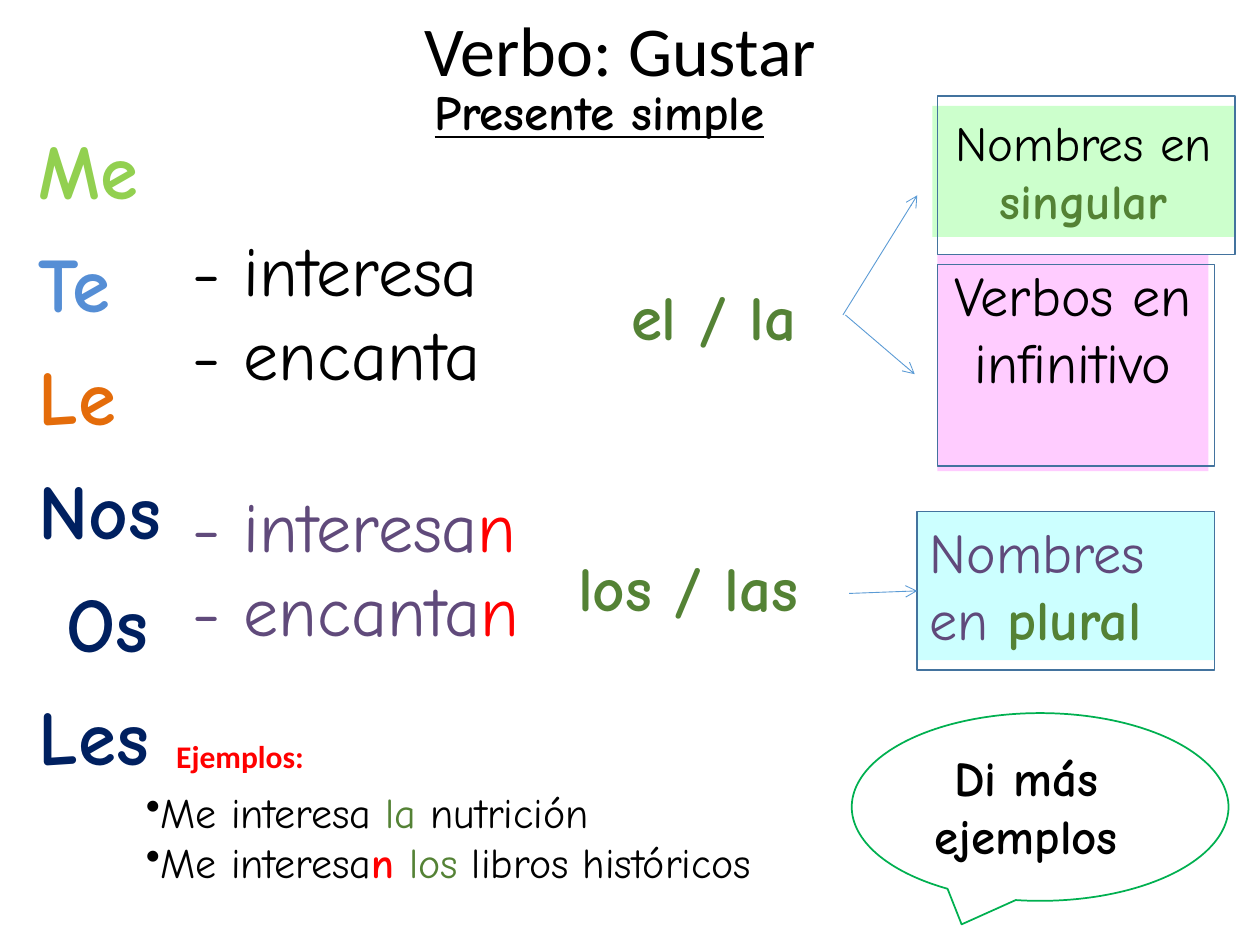
from lxml import etree
from pptx import Presentation
from pptx.dml.color import RGBColor
from pptx.enum.shapes import MSO_CONNECTOR, MSO_SHAPE
from pptx.enum.text import MSO_ANCHOR, MSO_AUTO_SIZE, PP_ALIGN
from pptx.oxml.ns import qn
from pptx.util import Inches, Pt

RECT = MSO_SHAPE.RECTANGLE
CALLOUT = MSO_SHAPE.OVAL_CALLOUT
STRAIGHT = MSO_CONNECTOR.STRAIGHT
LEFT, CENTER = PP_ALIGN.LEFT, PP_ALIGN.CENTER
TOP, NO_FIT = MSO_ANCHOR.TOP, MSO_AUTO_SIZE.NONE
LEFT_SIDE = 1

COLORS = {
    "black": "000000", "red": "FF0000", "green": "548235", "purple": "604A7B",
    "lime": "92D050", "blue": "558ED5", "orange": "E46C0A", "navy": "002060",
    "mint": "CCFFCC", "pink": "FFCCFF", "aqua": "CCFFFF",
    "border": "43739E", "arrow": "5B9BD5", "callout": "00B050",
}


class SlideBuilder:
    COLS, ROWS = 100, 75
    BODY, HEADING = "Comic Neue", "Calibri"

    def __init__(self, prs):
        self.prs = prs
        self.s = prs.slides.add_slide(prs.slide_layouts[5])

    def x(self, cols):
        return round(self.prs.slide_width * cols / self.COLS)

    def y(self, rows):
        return round(self.prs.slide_height * rows / self.ROWS)

    def box(self, left, top, width, height):
        return self.x(left), self.y(top), self.x(width), self.y(height)

    def color(self, name):
        return RGBColor.from_string(COLORS[name])

    def fill_text(self, tf, paragraphs, size, font=BODY, align=LEFT, bold=False,
                  underline=False, after=0, bullet=None):
        tf.word_wrap = True
        tf.auto_size = NO_FIT
        tf.vertical_anchor = TOP
        for i, runs in enumerate(paragraphs):
            p = tf.add_paragraph() if i else tf.paragraphs[0]
            p.alignment = align
            p.space_before, p.space_after = Pt(0), Pt(after)
            p.font.name, p.font.size = font, Pt(size)
            p.font.bold, p.font.underline = bold, underline
            if len(runs) == 1:
                p.font.color.rgb = self.color(runs[0][1])
            for text, color, *strong in runs:
                r = p.add_run()
                r.text = text
                if len(runs) > 1:
                    r.font.color.rgb = self.color(color)
                if strong:
                    r.font.bold = strong[0]
            if bullet:
                mark = etree.Element(qn("a:buChar"), char=bullet)
                p.font._element.addprevious(mark)

    def title(self, box, text):
        sp = self.s.shapes.title
        sp.left, sp.top, sp.width, sp.height = self.box(*box)
        self.fill_text(sp.text_frame, [[(text, "black")]], 40, self.HEADING)

    def text(self, box, paragraphs, size, **style):
        sp = self.s.shapes.add_textbox(*self.box(*box))
        self.fill_text(sp.text_frame, paragraphs, size, **style)

    def shape(self, kind, box, fill=None, line=None):
        sp = self.s.shapes.add_shape(kind, *self.box(*box))
        sp.shadow.inherit = False
        if fill:
            sp.fill.solid()
            sp.fill.fore_color.rgb = self.color(fill)
        else:
            sp.fill.background()
        if line:
            sp.line.color.rgb = self.color(line)
            sp.line.width = Pt(1)
        else:
            sp.line.fill.background()
        return sp

    def panel(self, box, fill, runs, size, align=CENTER):
        sp = self.shape(RECT, box, fill=fill)
        self.fill_text(sp.text_frame, [runs], size, align=align)

    def arrow(self, start, end, target=None):
        c = self.s.shapes.add_connector(
            STRAIGHT, self.x(start[0]), self.y(start[1]), self.x(end[0]), self.y(end[1]))
        if target is not None:
            c.end_connect(target, LEFT_SIDE)
        c.line.color.rgb = self.color("arrow")
        c.line.width = Pt(0.5)
        etree.SubElement(c.line._get_or_add_ln(), qn("a:tailEnd"), type="arrow")
        etree.SubElement(c._element.spPr, qn("a:effectLst"))


def main():
    prs = Presentation()
    prs.slide_width, prs.slide_height = Inches(10), Inches(7.5)
    b = SlideBuilder(prs)

    b.title((32.7, 0, 34.7, 7.7), "Verbo: Gustar")

    pronouns = [("Me", "lime"), ("Te", "blue"), ("Le", "orange"),
                ("Nos", "navy"), (" Os", "navy"), ("Les", "navy")]
    b.text((2.1, 9.2, 13.3, 66), [[run] for run in pronouns], 44, bold=True, after=12)

    verbs = ["- interesa", "- encanta"]
    b.text((14.3, 17.5, 27.6, 14.5), [[(v, "black")] for v in verbs], 40)
    b.text((14.3, 37.8, 30.6, 14.5),
           [[(v, "purple"), ("n", "red")] for v in verbs], 40)

    b.arrow((66.9, 25), (72.8, 15.5))
    b.arrow((67.1, 25), (72.6, 29.7))

    b.panel((74, 8.4, 24, 10.4), "mint",
            [("Nombres en ", "black"), ("singular", "green", True)], 28)
    b.panel((74.4, 20.2, 21.5, 17.2), "pink", [("Verbos en infinitivo", "black")], 32)
    b.shape(RECT, (74.4, 7.6, 23.6, 12.6), line="border")
    b.shape(RECT, (74.4, 21, 22, 16), line="border")
    b.panel((72.8, 40.6, 23.6, 11.8), "aqua",
            [("Nombres en ", "purple"), ("plural", "green", True)], 32, LEFT)
    plural = b.shape(RECT, (72.8, 40.6, 23.6, 12.6), line="border")

    b.text((13, 58, 12.8, 4), [[("Ejemplos:", "red")]], 18, font=b.HEADING, bold=True)
    examples = [
        [("Me interesa ", "black"), ("la ", "green"), ("nutrición", "black")],
        [("Me interesa", "black"), ("n ", "red", True), ("los", "green"),
         (" libros históricos", "black")],
    ]
    b.text((10.6, 61.9, 56.5, 9.1), examples, 24, bullet="•")

    b.shape(CALLOUT, (67.6, 56.6, 29.9, 14.9), line="callout")
    b.text((72, 58.8, 18.9, 10.4), [[("Di más ejemplos", "black")]], 28,
           align=CENTER, bold=True)
    b.text((33.5, 6, 31.5, 5.7), [[("Presente simple", "black")]], 28,
           bold=True, underline=True)
    b.text((49.1, 21.5, 17.8, 7.1), [[("el / la", "green")]], 36, bold=True)
    b.text((44.9, 43, 22.8, 7.1), [[("los / las", "green")]], 36, bold=True)
    b.arrow((67.4, 47.1), (72.8, 46.9), plural)

    prs.save("out.pptx")


if __name__ == "__main__":
    main()
